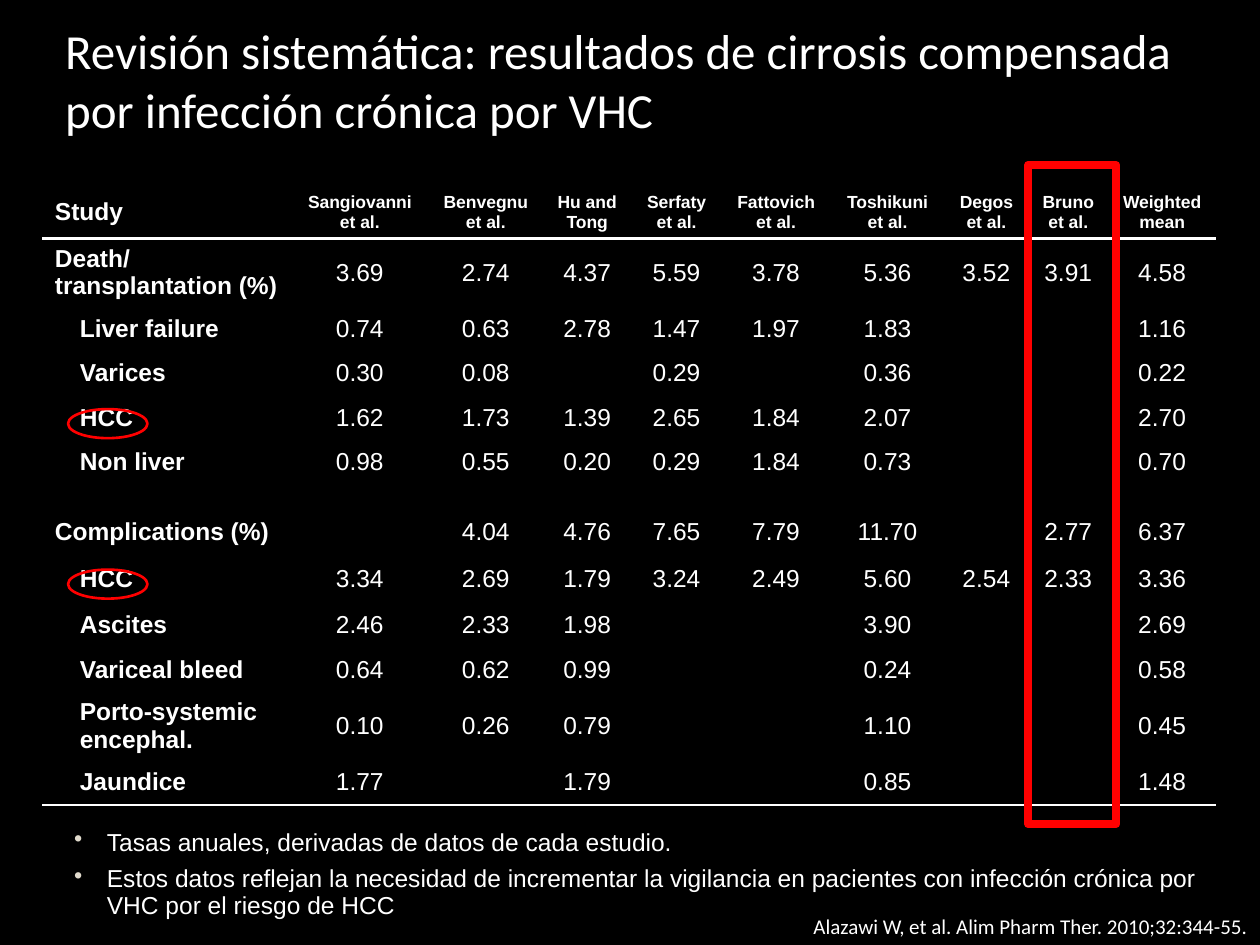
from lxml import etree
from pptx import Presentation
from pptx.dml.color import RGBColor
from pptx.enum import shapes, text
from pptx.oxml import ns
from pptx.util import Pt

WHITE, RED, BLACK = "FFFFFF", "FF0000", "000000"
NO_GRID_STYLE = "{2D5ABB26-0587-4C30-8999-92F81FD0307C}"

STUDIES = ["Sangiovanni et al.", "Benvegnu et al.", "Hu and Tong", "Serfaty et al.",
           "Fattovich et al.", "Toshikuni et al.", "Degos et al.", "Bruno et al.",
           "Weighted mean"]
COLUMN_WIDTHS = [141.8, 79.2, 64.8, 51.1, 51.1, 62.6, 64.8, 48.2, 45.4, 61.9]
HEADER_HEIGHT, ROW_HEIGHT, SPACER_HEIGHT = 30, 25.4, 14.4
HCC_HEIGHT, TWO_LINE_HEIGHT = 28, 39

# Label, indented, row height, one rate per study ("-" is an empty cell)
OUTCOMES = [
    ("Death/\ntransplantation (%)", False, TWO_LINE_HEIGHT,
     "3.69 2.74 4.37 5.59 3.78 5.36 3.52 3.91 4.58"),
    ("Liver failure", True, ROW_HEIGHT, "0.74 0.63 2.78 1.47 1.97 1.83 - - 1.16"),
    ("Varices", True, ROW_HEIGHT, "0.30 0.08 - 0.29 - 0.36 - - 0.22"),
    ("HCC", True, ROW_HEIGHT, "1.62 1.73 1.39 2.65 1.84 2.07 - - 2.70"),
    ("Non liver", True, ROW_HEIGHT, "0.98 0.55 0.20 0.29 1.84 0.73 - - 0.70"),
    ("", False, SPACER_HEIGHT, "- - - - - - - - -"),
    ("Complications (%)", False, ROW_HEIGHT, "- 4.04 4.76 7.65 7.79 11.70 - 2.77 6.37"),
    ("HCC", True, HCC_HEIGHT, "3.34 2.69 1.79 3.24 2.49 5.60 2.54 2.33 3.36"),
    ("Ascites", True, ROW_HEIGHT, "2.46 2.33 1.98 - - 3.90 - - 2.69"),
    ("Variceal bleed", True, ROW_HEIGHT, "0.64 0.62 0.99 - - 0.24 - - 0.58"),
    ("Porto-systemic encephal.", True, TWO_LINE_HEIGHT,
     "0.10 0.26 0.79 - - 1.10 - - 0.45"),
    ("Jaundice", True, ROW_HEIGHT, "1.77 - 1.79 - - 0.85 - - 1.48"),
]
NOTES = [
    "Tasas anuales, derivadas de datos de cada estudio.",
    "Estos datos reflejan la necesidad de incrementar la vigilancia en pacientes "
    "con infección crónica por VHC por el riesgo de HCC",
]


def color(value):
    return RGBColor.from_string(value)


def add_xml(parent, tag, **attributes):
    return etree.SubElement(parent, ns.qn(tag), attributes)


class SlideBuilder:
    """Holds the style and the current slide."""
    heading_font, body_font = "Calibri", "Arial"
    body_size, header_size = 14, 10

    def __init__(self, slide):
        self.slide = slide
        slide.background.fill.solid()
        slide.background.fill.fore_color.rgb = color(BLACK)

    def set_text(self, paragraph, content, size, font, bold=False):
        paragraph.text = content
        for run in paragraph.runs:
            run.font.size, run.font.name, run.font.bold = Pt(size), font, bold
            run.font.color.rgb = color(WHITE)

    def textbox(self, box, wrap=True, anchor=text.MSO_ANCHOR.TOP):
        frame = self.slide.shapes.add_textbox(*map(Pt, box)).text_frame
        frame.word_wrap = wrap
        frame.vertical_anchor = anchor
        return frame

    def title(self, content, box):
        heading = self.textbox(box, anchor=text.MSO_ANCHOR.BOTTOM).paragraphs[0]
        self.set_text(heading, content, 28, self.heading_font)

    def citation(self, content, box):
        citation = self.textbox(box, wrap=False).paragraphs[0]
        citation.alignment = text.PP_ALIGN.RIGHT
        self.set_text(citation, content, 12, self.heading_font)

    def bullets(self, items, box):
        frame = self.textbox(box)
        for index, item in enumerate(items):
            bullet = frame.add_paragraph() if index else frame.paragraphs[0]
            self.set_text(bullet, item, self.body_size, self.body_font)
            bullet.line_spacing = 0.9
            bullet.space_before = bullet.space_after = Pt(2.8)
            properties = bullet._p.get_or_add_pPr()
            properties.set("marL", str(Pt(18.7)))
            properties.set("indent", str(-Pt(18.7)))
            add_xml(add_xml(properties, "a:buClr"), "a:srgbClr", val="E0DACC")
            add_xml(properties, "a:buChar", char="•")

    def outline(self, kind, box, width):
        mark = self.slide.shapes.add_shape(kind, *map(Pt, box))
        mark.shadow.inherit = False
        mark.fill.background()
        mark.line.color.rgb = color(RED)
        mark.line.width = Pt(width)

    def cell(self, cell, content, size, bold, centred, indent=0):
        cell.fill.background()
        cell.vertical_anchor = text.MSO_ANCHOR.MIDDLE
        paragraph = cell.text_frame.paragraphs[0]
        self.set_text(paragraph, content, size, self.body_font, bold)
        if centred:
            paragraph.alignment = text.PP_ALIGN.CENTER
        if indent:
            properties = paragraph._p.get_or_add_pPr()
            properties.set("marL", str(Pt(indent)))
            properties.set("indent", "0")
        if not content:
            # The size of an empty cell decides how low its row may be
            add_xml(paragraph._p, "a:endParaRPr", sz=str(size * 100))

    def rule_below(self, row):
        for cell in row.cells:
            properties = cell._tc.get_or_add_tcPr()
            border = add_xml(properties, "a:lnB", w=str(Pt(1.5)))
            add_xml(add_xml(border, "a:solidFill"), "a:srgbClr", val=WHITE)
            properties.insert(0, border)

    def outcome_table(self, left, top):
        heights = [HEADER_HEIGHT] + [outcome[2] for outcome in OUTCOMES]
        frame = self.slide.shapes.add_table(
            len(heights), len(COLUMN_WIDTHS), Pt(left), Pt(top),
            Pt(sum(COLUMN_WIDTHS)), Pt(sum(heights)))
        table = frame.table
        table.first_row = table.horz_banding = False
        table._tbl.tblPr.find(ns.qn("a:tableStyleId")).text = NO_GRID_STYLE
        for column, width in zip(table.columns, COLUMN_WIDTHS):
            column.width = Pt(width)
        for row, height in zip(table.rows, heights):
            row.height = Pt(height)

        self.cell(table.cell(0, 0), "Study", self.body_size, True, False)
        for column, study in enumerate(STUDIES, 1):
            self.cell(table.cell(0, column), study, self.header_size, True, True)
        for row, (label, indented, height, rates) in enumerate(OUTCOMES, 1):
            size = self.body_size if label else 5
            self.cell(table.cell(row, 0), label, size, True, False, 14.2 * indented)
            for column, rate in enumerate(rates.split(), 1):
                self.cell(table.cell(row, column), rate.strip("-"), size, False, True)
        self.rule_below(table.rows[0])
        self.rule_below(table.rows[len(OUTCOMES)])


def main():
    deck = Presentation()
    deck.slide_width, deck.slide_height = Pt(720), Pt(540)
    builder = SlideBuilder(deck.slides.add_slide(deck.slide_layouts[6]))
    builder.outcome_table(24.2, 106.3)
    builder.title("Revisión sistemática: resultados de cirrosis compensada "
                  "por infección crónica por VHC", (30.2, 0.7, 658.8, 82))
    builder.citation("Alazawi W, et al. Alim Pharm Ther. 2010;32:344-55.",
                     (454.3, 518.4, 265.7, 21.6))
    for hcc_top in (233.8, 325.5):
        builder.outline(shapes.MSO_SHAPE.OVAL, (38.9, hcc_top, 45.4, 16.6), 1.5)
    builder.bullets(NOTES, (35.3, 470.9, 684.7, 59.8))
    builder.outline(shapes.MSO_SHAPE.RECTANGLE, (587.5, 94.3, 50.4, 376.6), 4.5)
    deck.save("out.pptx")


if __name__ == "__main__":
    main()
